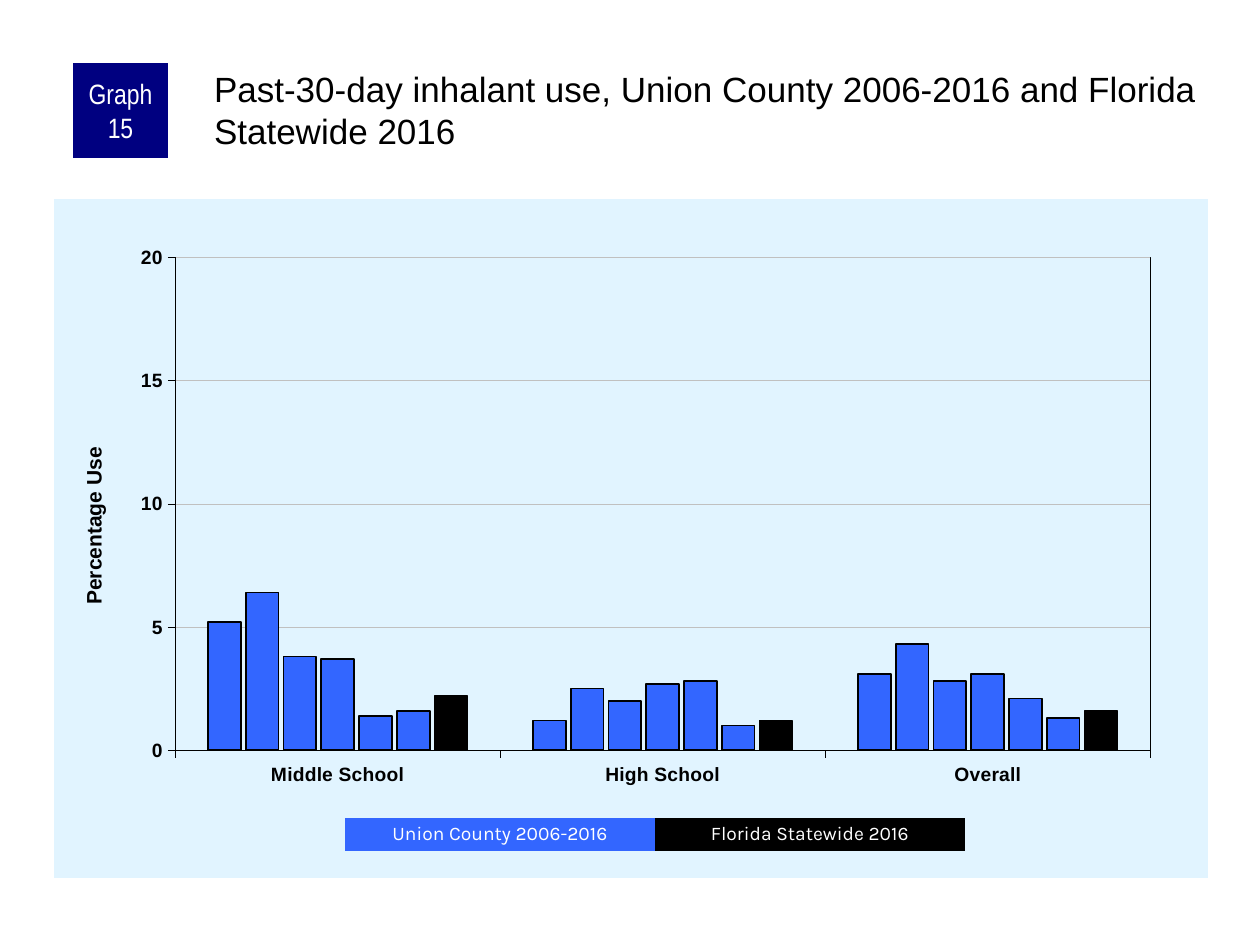
"""Build the slide on past-30-day inhalant use with its clustered column chart."""
from lxml.etree import fromstring
from pptx import Presentation
from pptx.chart.data import CategoryChartData
from pptx.dml.color import RGBColor
from pptx.enum.chart import XL_CHART_TYPE as ChartType, XL_TICK_MARK as TickMark
from pptx.enum.shapes import MSO_SHAPE as ShapeType
from pptx.enum.text import MSO_ANCHOR as Anchor, MSO_AUTO_SIZE as AutoSize, PP_ALIGN as Align
from pptx.oxml.ns import nsdecls, qn
from pptx.util import Pt

PX = 914400 // 126
BLACK = RGBColor(0, 0, 0)
WHITE = RGBColor(255, 255, 255)
NAVY = RGBColor(0, 0, 128)
BLUE = RGBColor(0x33, 0x66, 0xFF)
GRAY = RGBColor(0xC0, 0xC0, 0xC0)
PALE_BLUE = RGBColor(0xE1, 0xF4, 0xFF)

TITLE = "Past-30-day inhalant use, Union County 2006-2016 and Florida Statewide 2016"
CATEGORIES = ["Middle School", "High School", "Overall"]
SERIES = [
    ((5.2, 1.2, 3.1), BLUE),
    ((6.4, 2.5, 4.3), BLUE),
    ((3.8, 2, 2.8), BLUE),
    ((3.7, 2.7, 3.1), BLUE),
    ((1.4, 2.8, 2.1), BLUE),
    ((1.6, 1, 1.3), BLUE),
    ((2.2, 1.2, 1.6), BLACK),
]
LEGEND = [("Union County 2006-2016", BLUE), ("Florida Statewide 2016", BLACK)]

TITLE_BOX = (210, 63, 998, 105)
BADGE_BOX = (73, 63, 95, 95)
CHART_BOX = (54, 199, 1154, 679)
LEGEND_LEFT, LEGEND_TOP, LEGEND_WIDTH, LEGEND_HEIGHT = 345, 818, 310, 33


def emu(box):
    return [length * PX for length in box]


def style_font(font, name, size, color, bold=False):
    font.name, font.size, font.bold = name, Pt(size), bold
    font.color.rgb = color


def style_line(line, color, width):
    line.color.rgb = color
    line.width = Pt(width)


def set_margins(frame, left, top, right, bottom):
    frame.margin_left, frame.margin_top = left * PX, top * PX
    frame.margin_right, frame.margin_bottom = right * PX, bottom * PX


def add_label(slide, box, text, fill, font_name, size):
    shape = slide.shapes.add_shape(ShapeType.RECTANGLE, *emu(box))
    shape.shadow.inherit = False
    shape.fill.solid()
    shape.fill.fore_color.rgb = fill
    shape.line.fill.background()
    frame = shape.text_frame
    frame.word_wrap = True
    frame.vertical_anchor = Anchor.MIDDLE
    paragraph = frame.paragraphs[0]
    paragraph.alignment = Align.CENTER
    run = paragraph.add_run()
    run.text = text
    style_font(run.font, font_name, size, WHITE)
    return shape


def set_layout(parent, index, **values):
    existing = parent.find(qn("c:layout"))
    if existing is not None:
        parent.remove(existing)
    entries = "".join(f'<c:{tag} val="{value}"/>' for tag, value in values.items())
    parent.insert(index, fromstring(
        f'<c:layout {nsdecls("c")}><c:manualLayout>{entries}</c:manualLayout></c:layout>'))


def shape_properties(fill, line):
    return fromstring(f'<c:spPr {nsdecls("c", "a")}>{fill}<a:ln w="3175">{line}</a:ln></c:spPr>')


def solid(color):
    return f'<a:solidFill><a:srgbClr val="{color}"/></a:solidFill>'


def add_usage_chart(slide):
    data = CategoryChartData()
    data.categories = CATEGORIES
    for number, (values, color) in enumerate(SERIES, 1):
        data.add_series(f"Series {number}", values)
    chart = slide.shapes.add_chart(ChartType.COLUMN_CLUSTERED, *emu(CHART_BOX), data).chart
    chart.has_legend = chart.has_title = False
    style_font(chart.font, "Arial", 8, BLACK)

    plot = chart.plots[0]
    plot.gap_width, plot.overlap, plot.vary_by_categories = 200, -15, False
    for series, (values, color) in zip(plot.series, SERIES):
        series.invert_if_negative = False
        series.format.fill.solid()
        series.format.fill.fore_color.rgb = color
        style_line(series.format.line, BLACK, 1)

    for axis in (chart.category_axis, chart.value_axis):
        axis.major_tick_mark, axis.minor_tick_mark = TickMark.OUTSIDE, TickMark.NONE
        style_font(axis.tick_labels.font, "Arial", 11, BLACK, bold=True)
        style_line(axis.format.line, BLACK, 0.25)
    axis = chart.value_axis
    axis.minimum_scale, axis.maximum_scale, axis.major_unit = 0, 20, 5
    axis.has_major_gridlines = True
    style_line(axis.major_gridlines.format.line, GRAY, 0.25)
    run = axis.axis_title.text_frame.paragraphs[0].add_run()
    run.text = "Percentage Use"
    style_font(run.font, "Arial", 12, BLACK, bold=True)

    root = chart.element
    title = root.find(".//" + qn("c:valAx")).find(qn("c:title"))
    title.find(".//" + qn("a:bodyPr")).set("rot", "-5400000")
    title.find(".//" + qn("a:bodyPr")).set("vert", "horz")
    set_layout(title, 1, xMode="edge", yMode="edge", x=0.02, y=0.36)
    plot_area = root.find(".//" + qn("c:plotArea"))
    set_layout(plot_area, 0, layoutTarget="inner", xMode="edge", yMode="edge",
               x=0.105, y=0.086, w=0.845, h=0.726)
    plot_area.append(shape_properties("<a:noFill/>", solid(BLACK)))
    root.find(qn("c:chart")).addnext(shape_properties(solid(PALE_BLUE), "<a:noFill/>"))


def add_title(slide):
    title = slide.shapes.title
    title.left, title.top, title.width, title.height = emu(TITLE_BOX)
    frame = title.text_frame
    frame.word_wrap = True
    frame.auto_size = AutoSize.NONE
    frame.vertical_anchor = Anchor.TOP
    set_margins(frame, 4, 4, 0, 0)
    paragraph = frame.paragraphs[0]
    paragraph.alignment = Align.LEFT
    run = paragraph.add_run()
    run.text = TITLE
    style_font(run.font, "Arial", 20, BLACK)


def main():
    presentation = Presentation()
    presentation.slide_width, presentation.slide_height = emu((1260, 945))
    slide = presentation.slides.add_slide(presentation.slide_layouts[5])
    add_usage_chart(slide)
    badge = add_label(slide, BADGE_BOX, "Graph 15", NAVY, "Arial Narrow", 16)
    set_margins(badge.text_frame, 6, 0, 6, 0)
    add_title(slide)
    for index, (text, color) in enumerate(LEGEND):
        left = LEGEND_LEFT + index * LEGEND_WIDTH
        box = (left, LEGEND_TOP, LEGEND_WIDTH, LEGEND_HEIGHT)
        label = add_label(slide, box, text, color, "Karla", 11)
        label.text_frame.paragraphs[0].line_spacing = 0.9
    presentation.save("out.pptx")


if __name__ == "__main__":
    main()
